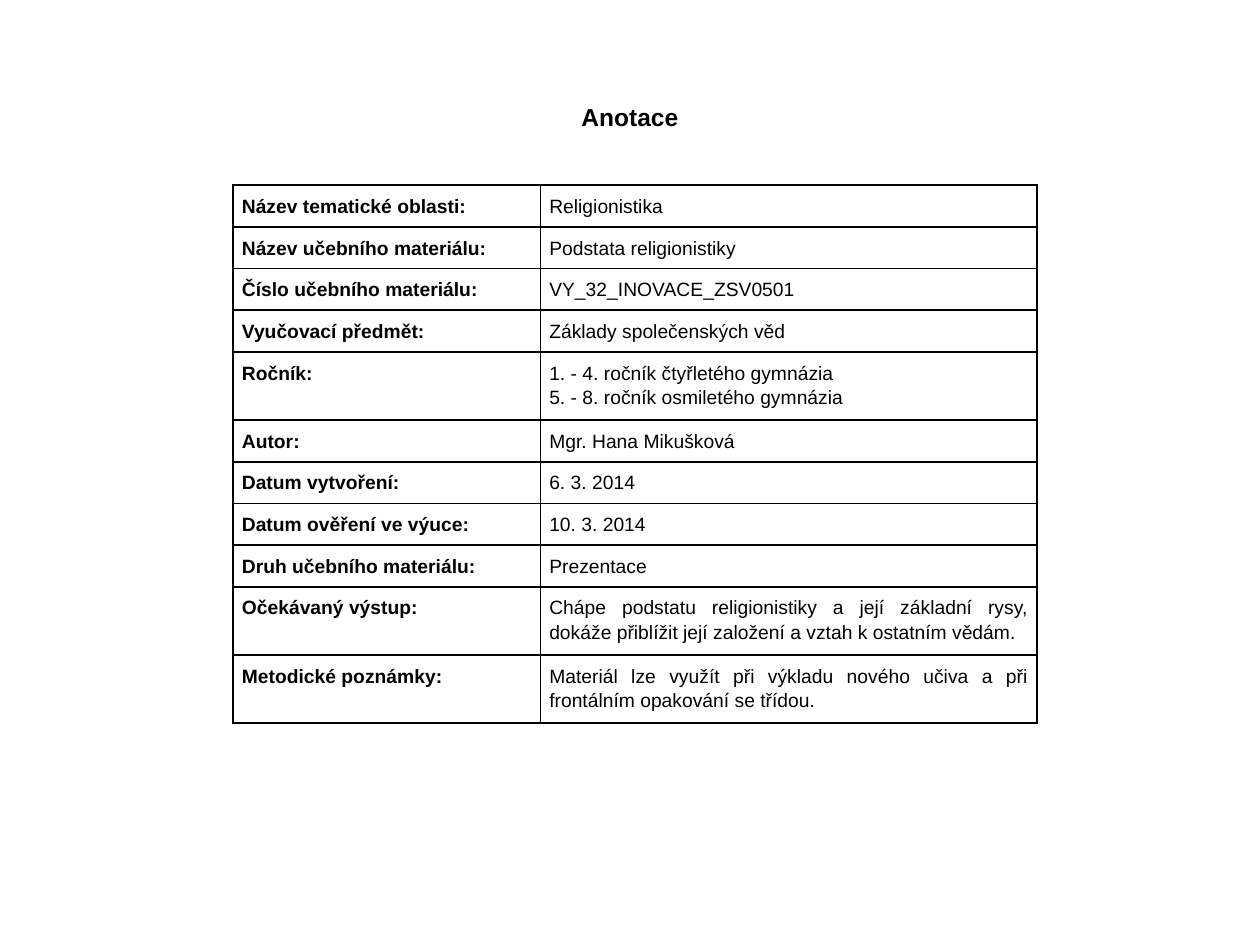
import dataclasses

import lxml.etree
import pptx
import pptx.dml.color
import pptx.enum.text
import pptx.oxml.ns
import pptx.util

Inches = pptx.util.Inches
Pt = pptx.util.Pt
ALIGN = pptx.enum.text.PP_ALIGN
ANCHOR = pptx.enum.text.MSO_ANCHOR


@dataclasses.dataclass(frozen=True)
class Theme:
    font: str = "Arial"
    ink: str = "000000"
    title_size: int = 14
    table_size: int = 11
    line_spacing: float = 1.15
    border_width: int = 1


THEME = Theme()
SLIDE_WIDTH, SLIDE_HEIGHT = 10, 7.5
TABLE_LEFT, TABLE_TOP = 1.85, 1.47
COLUMN_WIDTHS = (2.44, 3.94)
ROW_HEIGHTS = {1: 0.33, 2: 0.54}  # by number of text lines

# Label, value, number of text lines
ANNOTATION = [
    ("Název tematické oblasti:", "Religionistika", 1),
    ("Název učebního materiálu:", "Podstata religionistiky", 1),
    ("Číslo učebního materiálu:", "VY_32_INOVACE_ZSV0501", 1),
    ("Vyučovací předmět:", "Základy společenských věd", 1),
    ("Ročník:", "1. - 4. ročník čtyřletého gymnázia\n"
                "5. - 8. ročník osmiletého gymnázia", 2),
    ("Autor:", "Mgr. Hana Mikušková", 1),
    ("Datum vytvoření:", "6. 3. 2014", 1),
    ("Datum ověření ve výuce:", "10. 3. 2014", 1),
    ("Druh učebního materiálu:", "Prezentace", 1),
    ("Očekávaný výstup:", "Chápe podstatu religionistiky a její základní rysy, "
                          "dokáže přiblížit její založení a vztah k ostatním vědám.", 2),
    ("Metodické poznámky:", "Materiál lze využít při výkladu nového učiva a při "
                            "frontálním opakování se třídou.", 2),
]


def write_text(text_frame, text, size, bold, alignment, line_spacing=None):
    text_frame.text = text
    for paragraph in text_frame.paragraphs:
        paragraph.alignment = alignment
        paragraph.line_spacing = line_spacing
        for run in paragraph.runs:
            run.font.name = THEME.font
            run.font.size = Pt(size)
            run.font.bold = bold
            run.font.color.rgb = pptx.dml.color.RGBColor.from_string(THEME.ink)


def add_title(slide, text):
    shape = slide.shapes.add_textbox(0, Inches(0.68), Inches(SLIDE_WIDTH), Inches(0.5))
    shape.text_frame.word_wrap = True
    shape.text_frame.vertical_anchor = ANCHOR.MIDDLE
    write_text(shape.text_frame, text, THEME.title_size, True, ALIGN.CENTER)


def set_borders(cell):
    """Draw all four sides; they must precede the fill in the cell properties."""
    qn = pptx.oxml.ns.qn
    properties = cell._tc.get_or_add_tcPr()
    for position, side in enumerate(("a:lnL", "a:lnR", "a:lnT", "a:lnB")):
        line = lxml.etree.Element(qn(side), w=str(Pt(THEME.border_width)))
        fill = lxml.etree.SubElement(line, qn("a:solidFill"))
        lxml.etree.SubElement(fill, qn("a:srgbClr"), val=THEME.ink)
        properties.insert(position, line)


def fill_cell(cell, text, bold, alignment):
    cell.fill.background()
    cell.margin_left = cell.margin_right = Inches(0.07)
    cell.margin_top = cell.margin_bottom = Inches(0.06)
    write_text(cell.text_frame, text, THEME.table_size, bold, alignment,
               THEME.line_spacing)
    set_borders(cell)


def add_annotation_table(slide, rows):
    heights = [ROW_HEIGHTS[lines] for _, _, lines in rows]
    table = slide.shapes.add_table(
        len(rows), len(COLUMN_WIDTHS), Inches(TABLE_LEFT), Inches(TABLE_TOP),
        Inches(sum(COLUMN_WIDTHS)), Inches(sum(heights))).table
    table.first_row = table.horz_banding = False
    for column, width in zip(table.columns, COLUMN_WIDTHS):
        column.width = Inches(width)
    for index, (label, value, _) in enumerate(rows):
        table.rows[index].height = Inches(heights[index])
        fill_cell(table.cell(index, 0), label, True, ALIGN.LEFT)
        fill_cell(table.cell(index, 1), value, False, ALIGN.JUSTIFY)


def main():
    presentation = pptx.Presentation()
    presentation.slide_width = Inches(SLIDE_WIDTH)
    presentation.slide_height = Inches(SLIDE_HEIGHT)
    slide = presentation.slides.add_slide(presentation.slide_layouts[6])
    add_title(slide, "Anotace")
    add_annotation_table(slide, ANNOTATION)
    presentation.save("out.pptx")


if __name__ == "__main__":
    main()
